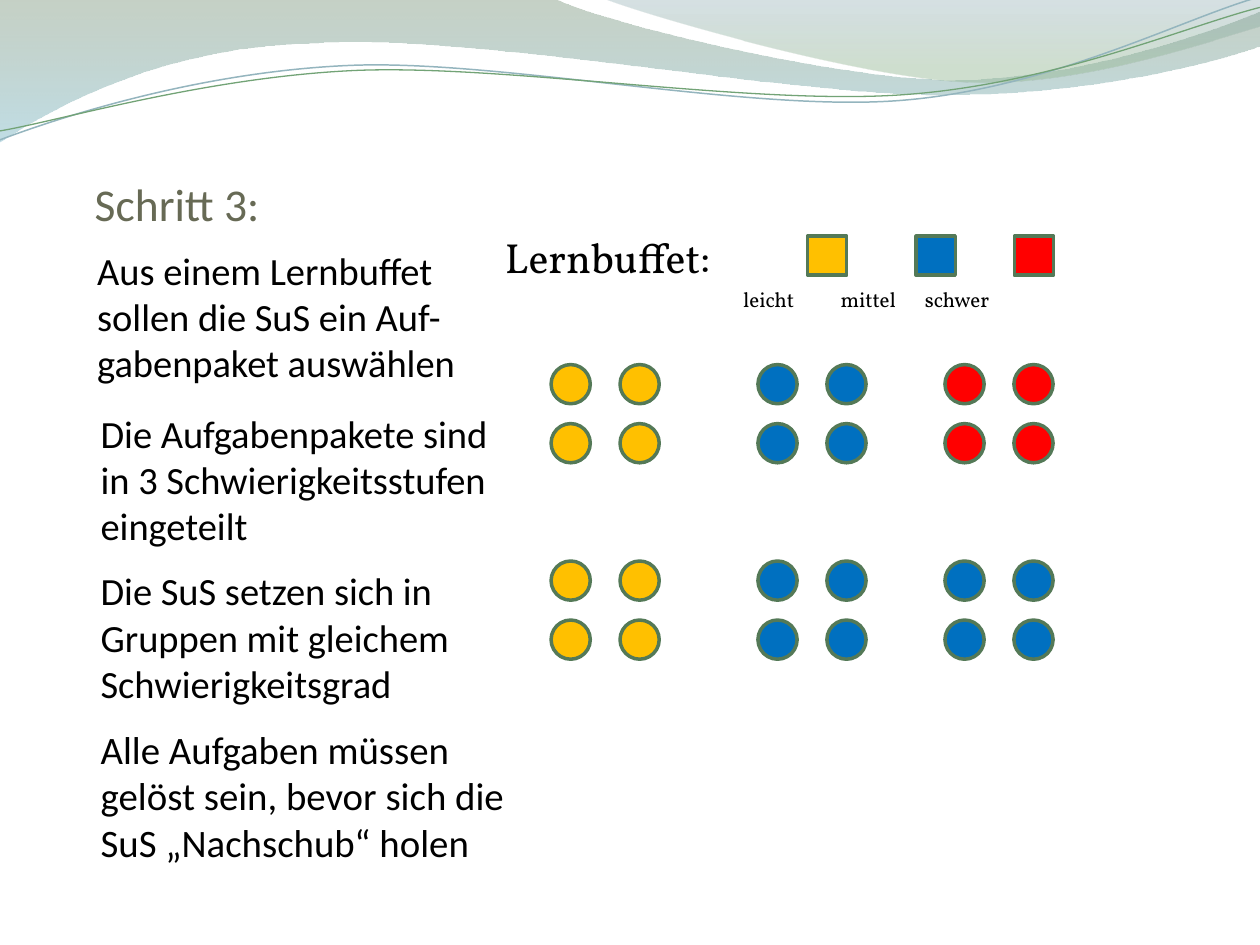
from lxml import etree
from pptx import Presentation
from pptx import util as u
from pptx.dml import color as col
from pptx.enum import shapes, text
from pptx.oxml import ns

Cm, Pt = u.Cm, u.Pt


def rgb(code):
    return col.RGBColor.from_string(code)


def style(shape, box, paras, pads, font, ink):
    """Place a text shape and fill it with (wording, size) paragraphs."""
    shape.left, shape.top, shape.width, shape.height = [Cm(n) for n in box]
    frame = shape.text_frame
    frame.word_wrap = True
    frame.auto_size = text.MSO_AUTO_SIZE.NONE
    frame.margin_left = frame.margin_right = Cm(pads[0])
    frame.margin_top, frame.margin_bottom = Cm(pads[1]), Cm(pads[2])
    frame.text = "\n".join(words for words, size in paras)
    for para, (words, size) in zip(frame.paragraphs, paras):
        para.alignment = text.PP_ALIGN.LEFT
        para.space_before = Pt(size * 0.2)
        para.font.size = Pt(size)
        props = para._p.get_or_add_pPr()
        props.set("marL", "0")
        props.set("indent", "0")
        props.insert_element_before(
            etree.SubElement(props, ns.qn("a:buNone")), "a:defRPr")
        for run in para.runs:
            run.font.name, run.font.size = font, Pt(size)
            run.font.color.rgb = rgb(ink)


deck = Presentation()
deck.slide_width, deck.slide_height = Cm(25.4), Cm(19.05)
slide = deck.slides.add_slide(deck.slide_layouts[3])
tree = slide.shapes
title, left, right = list(slide.placeholders)

# Waves: a start, then lines (2 numbers) and Bézier curves (6 numbers), in cm.
# Bands have gradient stops (place, colour, opacity); strands have a line.
bands = [
    ([(0, 0), (11.18, -0.03), (12.09, 0.43, 16.87, 1.6, 19.25, 1.6),
      (21.67, 1.6, 24.33, 0.66, 25.4, 0.23), (25.43, 0.91),
      (24.97, 1.12, 22.1, 1.93, 18.95, 1.91),
      (15.8, 1.91, 9.7, 0.71, 6.53, 0.86),
      (3.28, 0.91, 1.17, 2.11, -0.03, 2.87)],
     [(0, "809980", 45), (1, "8DC1CF", 55)]),
    ([(12.17, -0.03), (12.93, 0.28, 17.32, 1.57, 19.53, 1.65),
      (21.74, 1.75, 24.41, 0.81, 25.4, 0.53), (25.4, 0)],
     [(0, "779BA4", 30), (0.8, "96B996", 45)]),
]
strands = [
    ([(0, 2.82), (1.22, 2.36, 4.01, 1.45, 7.04, 1.32),
      (10.03, 1.19, 15.06, 2.26, 18.11, 2.03),
      (21.16, 1.8, 23.83, 0.38, 25.35, -0.05)], ("94B5BE", 0.85)),
    ([(0, 2.64), (1.19, 2.44, 4.17, 1.55, 7.19, 1.42),
      (10.24, 1.3, 15.16, 2.13, 18.21, 1.91),
      (21.23, 1.7, 23.9, 0.53, 25.4, 0.15)], ("72A376", 0.75)),
]
for route, look in bands + strands:
    band = isinstance(look, list)
    ends = [(Cm(part[-2]), Cm(part[-1])) for part in route]
    pen = tree.build_freeform(*ends[0])
    pen.add_line_segments(ends[1:], close=band)
    wave = pen.convert_to_shape()
    wave.shadow.inherit = False
    # Turn the straight pieces that stand for curves into Bézier pieces
    lines = list(wave._element.spPr.iter(ns.qn("a:lnTo")))
    for line, part in zip(lines, route[1:]):
        if len(part) == 6:
            line.tag = ns.qn("a:cubicBezTo")
            for i in (2, 0):
                spot = etree.Element(ns.qn("a:pt"))
                spot.set("x", str(Cm(part[i]) - wave.left))
                spot.set("y", str(Cm(part[i + 1]) - wave.top))
                line.insert(0, spot)
    if band:
        wave.line.fill.background()
        wave.fill.gradient()
        wave.fill.gradient_angle = 270
        for stop, (place, code, _) in zip(wave.fill.gradient_stops, look):
            stop.position, stop.color.rgb = place, rgb(code)
        tints = wave._element.spPr.iter(ns.qn("a:srgbClr"))
        for tint, (_, _, alpha) in zip(list(tints), look):
            etree.SubElement(tint, ns.qn("a:alpha"), val=str(alpha * 1000))
    else:
        wave.fill.background()
        wave.line.color.rgb, wave.line.width = rgb(look[0]), Pt(look[1])

# Text
for holder in (title, left, right):
    tree._spTree.append(holder._element)
slim = (0.05, 0.13, 0.13)
style(title, (1.91, 1.42, 7.62, 3.23), [("Schritt 3:", 26)],
      (0, 0.13, 0), "Calibri", "676A55")
title.text_frame.vertical_anchor = text.MSO_ANCHOR.BOTTOM
style(left, (1.91, 4.85, 8.2, 3.48),
      [("Aus einem Lernbuffet sollen die SuS ein Auf-gabenpaket auswählen",
        22)], slim, "Calibri", "000000")
style(right, (9.93, 4.67, 14.2, 12.7),
      [("Lernbuffet:", 24), ("leicht", 12)],
      (0.25, 0, 0.13), "Vollkorn", "000000")
levels = right.text_frame.paragraphs[1]
levels._p.pPr.set("marL", str(Cm(4.8)))
# Each gap is one space, widened by letter spacing (hundredths of a point)
for words, wide in ((" ", 2400), ("mittel", 0), (" ", 1400), ("schwer", 0)):
    run = levels.add_run()
    run.text = words
    run.font.name, run.font.size = "Vollkorn", Pt(12)
    run.font.color.rgb = rgb("000000")
    run.font._element.set("spc", str(wide))

notes = [
    ("Die Aufgabenpakete sind in 3 Schwierigkeitsstufen eingeteilt", 22),
    ("Die SuS setzen sich in Gruppen mit gleichem Schwierigkeitsgrad", 22),
    ("Alle Aufgaben müssen gelöst sein, bevor sich die SuS „Nachschub“ holen",
     22.2),
]
for i, note in enumerate(notes):
    box = tree.add_textbox(0, 0, 0, 0)
    style(box, (1.98, 8.13 + i * 3.18, 8.33, 3.18), [note],
          slim, "Calibri", "000000")

# Task packets (squares) and groups of four pupils (circles)
gold, blue, red = "FFC000", "0070C0", "FF0000"
oval, rect = shapes.MSO_SHAPE.OVAL, shapes.MSO_SHAPE.RECTANGLE
marks = [(rect, x, 4.76, hue)
         for x, hue in ((16.28, gold), (18.47, blue), (20.45, red))]
for top, hues in ((7.35, (gold, blue, red)), (11.31, (gold, blue, blue))):
    for x, hue in zip((11.11, 15.28, 19.05), hues):
        marks += [(oval, x + c * 1.39, top + r * 1.19, hue)
                  for r in (0, 1) for c in (0, 1)]
for kind, x, y, hue in marks:
    mark = tree.add_shape(kind, Cm(x), Cm(y), Cm(0.79), Cm(0.79))
    mark.shadow.inherit = False
    mark.fill.solid()
    mark.fill.fore_color.rgb = rgb(hue)
    mark.line.color.rgb, mark.line.width = rgb("547957"), Pt(2)

deck.save("out.pptx")
